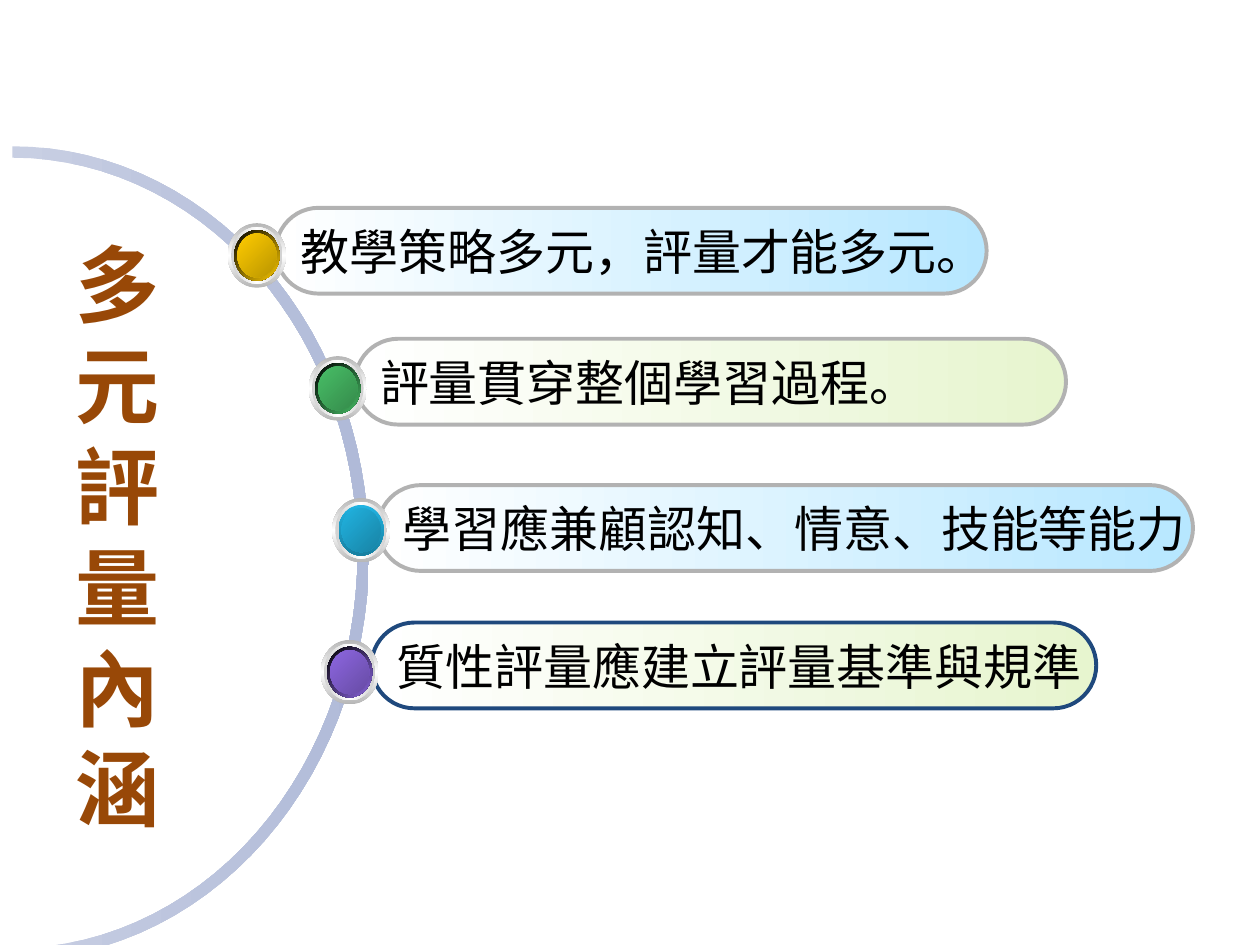
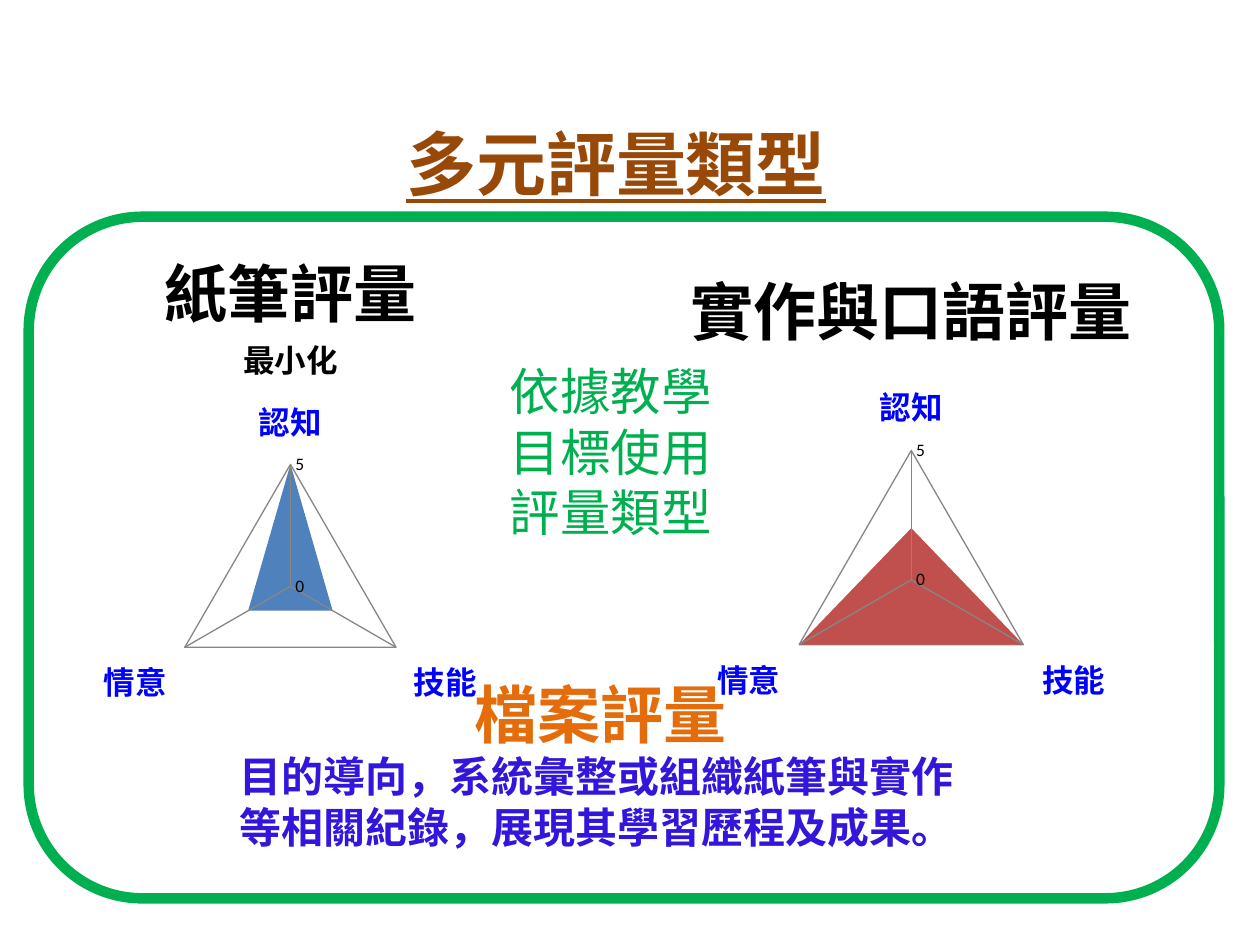
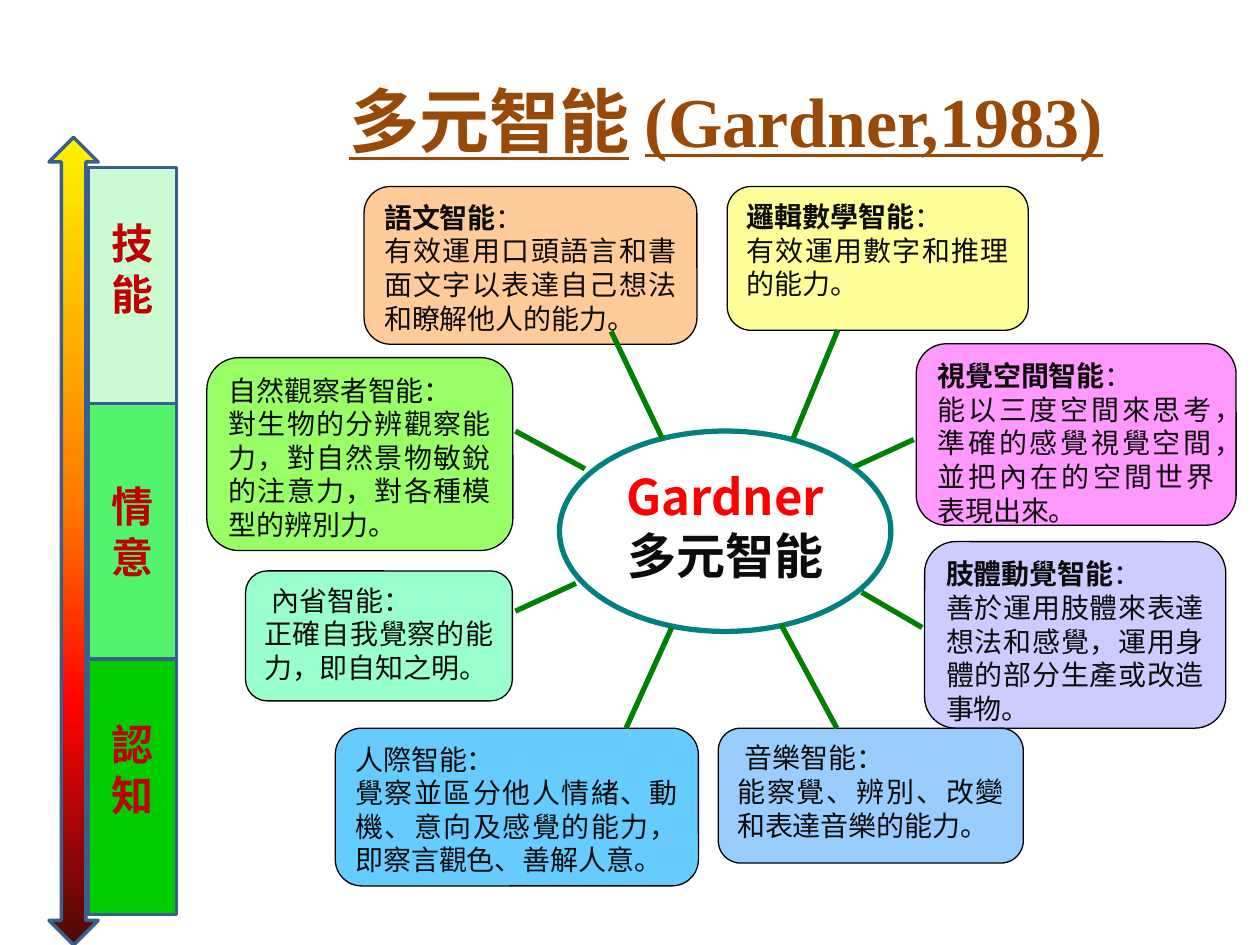
from math import cos, pi, sin

from lxml import etree
from pptx import Presentation
from pptx.chart.data import CategoryChartData
from pptx.dml.color import RGBColor
from pptx.enum.chart import XL_CHART_TYPE, XL_TICK_MARK
from pptx.enum.shapes import MSO_CONNECTOR, MSO_SHAPE
from pptx.enum.text import MSO_ANCHOR, PP_ALIGN
from pptx.oxml.ns import qn
from pptx.util import Cm, Pt

ROUND, OVAL, RECT = MSO_SHAPE.ROUNDED_RECTANGLE, MSO_SHAPE.OVAL, MSO_SHAPE.RECTANGLE
UP_DOWN = MSO_SHAPE.UP_DOWN_ARROW
STRAIGHT = MSO_CONNECTOR.STRAIGHT
RADAR = XL_CHART_TYPE.RADAR_FILLED
NO_TICK = XL_TICK_MARK.NONE
TOP, MIDDLE = MSO_ANCHOR.TOP, MSO_ANCHOR.MIDDLE
LEFT, CENTER, JUSTIFY = PP_ALIGN.LEFT, PP_ALIGN.CENTER, PP_ALIGN.JUSTIFY

SANS, SERIF, LATIN = "Noto Sans CJK SC", "Times New Roman", "Calibri"
COLORS = {
    "title": "984807", "black": "000000", "ink": "0D0C0B", "white": "FFFFFF",
    "green": "00B050", "orange": "E46C0A", "violet": "3216DC", "blue": "0000FF",
    "grid": "868686", "pill_line": "B2B2B2", "navy": "1F497D",
    "pill_blue": "B7E7FF", "pill_green": "E7F5CF",
    "arc_light": "C8CFE3", "arc_dark": "B0BAD8",
    "paper": "4F81BD", "practice": "C0504D",
    "hub_line": "008080", "spoke": "008000", "red": "FF0000",
    "domain_text": "C00000", "domain_line": "3A5F8C",
}


def rgb(color):
    return RGBColor.from_string(COLORS.get(color, color))


# ---- Shared elements ----

def style(font, size, color, name=SANS, bold=False, underline=None):
    font.size, font.bold, font.underline = Pt(size), bold, underline
    font.color.rgb = rgb(color)
    font.name = name
    etree.SubElement(font._rPr, qn("a:ea")).set("typeface", SANS)


def add_paragraph(frame, parts, size, color, name=SANS, bold=False,
                  underline=None, align=LEFT, indent=0):
    """Write one paragraph; parts is a text or a list of (text, run settings)."""
    paragraph = frame.paragraphs[0]
    if paragraph.runs:
        paragraph = frame.add_paragraph()
    paragraph.alignment = align
    if indent:
        paragraph._p.get_or_add_pPr().set("indent", str(Cm(indent)))
    style(paragraph.font, size, color, name, bold, underline)
    for text, settings in [(parts, {})] if isinstance(parts, str) else parts:
        run = paragraph.add_run()
        run.text = text
        for key, value in settings.items():
            setattr(run.font, key, value)


def add_box(slide, box, anchor=TOP):
    frame = slide.shapes.add_textbox(*map(Cm, box)).text_frame
    frame.word_wrap, frame.vertical_anchor = True, anchor
    return frame


def add_title(slide, box, parts, name=SANS):
    add_paragraph(add_box(slide, box, MIDDLE), parts, 40, "title", name,
                  bold=True, underline=True, align=CENTER)


def fill_gradient(shape, stops, angle):
    """Fill with (position, color) stops; the angle runs clockwise."""
    shape.fill.gradient()
    gradient = shape._element.spPr.find(qn("a:gradFill"))
    stop_list = gradient.find(qn("a:gsLst"))
    for old in list(stop_list):
        stop_list.remove(old)
    for position, color in stops:
        stop = etree.SubElement(stop_list, qn("a:gs"), pos=str(position * 1000))
        etree.SubElement(stop, qn("a:srgbClr"), val=COLORS.get(color, color))
    gradient.find(qn("a:lin")).set("ang", str(angle * 60000))


def finish(shape, fill=None, line=None, width=1, angle=0):
    """Fill with a color or a list of stops, and set the outline."""
    shape.shadow.inherit = False
    if isinstance(fill, list):
        fill_gradient(shape, fill, angle)
    elif fill:
        shape.fill.solid()
        shape.fill.fore_color.rgb = rgb(fill)
    else:
        shape.fill.background()
    if line:
        shape.line.color.rgb, shape.line.width = rgb(line), Pt(width)
    else:
        shape.line.fill.background()


def add_preset(slide, preset, box, fill=None, line=None, width=1, angle=0,
               anchor=TOP):
    shape = slide.shapes.add_shape(preset, *map(Cm, box))
    finish(shape, fill, line, width, angle)
    shape.text_frame.word_wrap = True
    shape.text_frame.vertical_anchor = anchor
    return shape


# ---- Slide 1: content of assessment ----

def add_arc(slide):
    center_x, center_y, steps = 0.25, 11.15, 60
    turns = [-pi / 2 + pi * i / steps for i in range(steps + 1)]
    outer = [(center_x + 7.19 * cos(t), center_y + 8.2 * sin(t)) for t in turns]
    inner = [(center_x + 6.96 * cos(t), center_y + 7.97 * sin(t)) for t in turns]
    points = [(Cm(x), Cm(y)) for x, y in outer + inner[::-1]]
    builder = slide.shapes.build_freeform(*points[0])
    builder.add_line_segments(points[1:], close=True)
    finish(builder.convert_to_shape(), [(0, "arc_light"), (100, "arc_dark")])


def add_pill(slide, left, top, width, text, tint, line):
    pill = add_preset(slide, ROUND, (left, top, width, 1.73),
                      [(0, "white"), (100, tint)], line, 2.25, anchor=MIDDLE)
    pill.adjustments[0] = 0.5
    pill.text_frame.word_wrap = False
    add_paragraph(pill.text_frame, text, 28, "black")


def add_bead(slide, x, y, rim, light, dark, rim_angle):
    rings = [
        (1.17, 1.3, [(0, "B6B6B6"), (50, "white"), (100, "B6B6B6")], 90),
        (1.04, 1.14, [(0, "D1D1D1"), (50, "white"), (100, "D1D1D1")], 0),
        (0.91, 1.02, [(0, rim[0]), (100, rim[1])], rim_angle),
        (0.79, 0.89, [(0, light), (100, dark)], 45),
    ]
    for width, height, stops, angle in rings:
        box = (x - width / 2, y - height / 2, width, height)
        add_preset(slide, OVAL, box, stops, angle=angle)


def build_content(slide):
    add_arc(slide)
    for pill in [
        (7.49, 12.55, 14.61, "質性評量應建立評量基準與規準", "pill_green", "navy"),
        (7.62, 9.78, 16.43, "學習應兼顧認知、情意、技能等能力", "pill_blue", "pill_line"),
        (7.16, 6.83, 14.33, "評量貫穿整個學習過程。", "pill_green", "pill_line"),
        (5.56, 4.19, 14.33, "教學策略多元，評量才能多元。", "pill_blue", "pill_line"),
    ]:
        add_pill(slide, *pill)
    for bead in [
        (5.18, 5.15, ("black", "FFCC00"), "FFCC00", "BA9500", 45),
        (6.81, 7.83, ("black", "48BE67"), "48BE67", "358B4B", 45),
        (7.28, 10.69, ("21B3E1", "1880A1"), "21B3E1", "1883A4", 90),
        (7.05, 13.55, ("black", "8D67E1"), "8D67E1", "674BA4", 45),
    ]:
        add_bead(slide, *bead)
    heading = add_box(slide, (1.27, 4.57, 2.34, 14.45))
    add_paragraph(heading, "多元評量內涵", 48, "title", bold=True)


# ---- Slide 2: types of assessment ----

def add_radar(slide, box, titles, scores, color):
    data = CategoryChartData()
    data.categories = ["認知", "技能", "情意"]
    data.add_series("Series 1", scores)
    chart = slide.shapes.add_chart(RADAR, *map(Cm, box), data).chart
    chart.has_legend = False
    style(chart.font, 10, "black", LATIN)

    chart.has_title = True
    for text, size in titles:
        add_paragraph(chart.chart_title.text_frame, text, size, "black", LATIN,
                      bold=True, align=CENTER)
    chart.chart_title.include_in_layout = False

    domains, score_axis = chart.category_axis, chart.value_axis
    for axis in (domains, score_axis):
        axis.major_tick_mark = axis.minor_tick_mark = NO_TICK
        axis.has_major_gridlines = True
        axis.major_gridlines.format.line.color.rgb = rgb("grid")
    domains.format.line.fill.background()
    style(domains.tick_labels.font, 18, "blue", LATIN, bold=True)
    score_axis.format.line.color.rgb = rgb("grid")
    score_axis.minimum_scale, score_axis.maximum_scale = 0, 5
    score_axis.major_unit = 5

    area = chart.plots[0].series[0].format
    area.fill.solid()
    area.fill.fore_color.rgb = rgb(color)
    area.line.fill.background()


def build_types(slide):
    add_preset(slide, ROUND, (0.58, 4.37, 24, 13.74), line="green", width=6)
    portfolio = add_box(slide, (4.57, 13.49, 15.09, 3.84))
    add_paragraph(portfolio, "檔案評量", 36, "orange", LATIN, bold=True, align=CENTER)
    add_paragraph(portfolio, "目的導向，系統彙整或組織紙筆與實作等相關紀錄，展現其學習歷程及成果。",
                  24, "violet", LATIN, bold=True)
    add_radar(slide, (0, 4.45, 11.71, 10.03), [("紙筆評量", 36), ("最小化", 18)],
              (5, 2, 2), "paper")
    add_radar(slide, (12.12, 4.57, 12.5, 9.93), [("實作與口語評量", 36)],
              (2, 5, 5), "practice")
    add_title(slide, (0.99, 1.98, 22.86, 2.59), "多元評量類型")
    add_paragraph(add_box(slide, (9.53, 7.14, 5.56, 3.76)), "依據教學目標使用評量類型",
                  28.8, "green", align=CENTER)


# ---- Slide 3: multiple intelligences ----

# box, fill, name, bold name, indent of name, description, spoke
INTELLIGENCES = [
    ((7.34, 3.76, 6.71, 3.18), "FFCC99", "語文智能", True, 0,
     "有效運用口頭語言和書面文字以表達自己想法和瞭解他人的能力。",
     (12.32, 6.68, 13.36, 8.86)),
    ((18.64, 10.92, 6.07, 3.76), "CCCCFF", "肢體動覺智能", True, 0,
     "善於運用肢體來表達想法和感覺，運用身體的部分生產或改造事物。",
     (17.37, 11.94, 18.59, 12.65)),
    ((18.47, 6.93, 6.45, 3.66), "FF99FF", "視覺空間智能", True, 0,
     "能以三度空間來思考，準確的感覺視覺空間，並把內在的空間世界表現出來。",
     (17.2, 9.42, 18.42, 8.86)),
    ((14.66, 3.76, 6.07, 2.9), "FFFF99", "邏輯數學智能", True, 0,
     "有效運用數字和推理的能力。",
     (16.89, 6.65, 15.98, 8.86)),
    ((4.17, 7.21, 6.17, 3.89), "99FF66", "自然觀察者智能", False, 0,
     "對生物的分辨觀察能力，對自然景物敏銳的注意力，對各種模型的辨別力。",
     (10.39, 8.69, 11.79, 9.45)),
    ((4.95, 11.51, 5.38, 2.62), "99FFCC", "內省智能", False, 0.15,
     "正確自我覺察的能力，即自知之明。",
     (11.61, 11.76, 10.39, 12.32)),
    ((6.76, 14.68, 7.32, 3.18), "66CCFF", "人際智能", False, 0,
     "覺察並區分他人情緒、動機、意向及感覺的能力，即察言觀色、善解人意。",
     (13.54, 12.65, 12.62, 14.68)),
    ((14.48, 14.68, 6.15, 2.72), "99CCFF", "音樂智能", False, 0.15,
     "能察覺、辨別、改變和表達音樂的能力。",
     (15.75, 12.6, 16.87, 14.68)),
]


def add_card(slide, box, fill, name, bold, indent, description):
    frame = add_preset(slide, ROUND, box, fill, "black", 0.75).text_frame
    heading = [(name, {"bold": True}), ("：", {})] if bold else name + "："
    add_paragraph(frame, heading, 16, "ink", SERIF, align=JUSTIFY, indent=indent)
    add_paragraph(frame, description, 16, "ink", SERIF, align=JUSTIFY)


def add_spoke(slide, ends):
    spoke = slide.shapes.add_connector(STRAIGHT, *map(Cm, ends))
    spoke.line.color.rgb, spoke.line.width = rgb("spoke"), Pt(3)
    etree.SubElement(spoke._element.spPr, qn("a:effectLst"))


def add_domain(slide, top, height, text, fill, lift):
    domain = add_preset(slide, RECT, (1.78, top, 1.78, height), fill,
                        "domain_line", 2, anchor=MIDDLE)
    domain.text_frame.margin_bottom = Cm(0.13 + lift)
    add_paragraph(domain.text_frame, text, 24, "domain_text", LATIN, bold=True,
                  align=CENTER)


def build_intelligences(slide):
    hub = add_preset(slide, OVAL, (11.28, 8.69, 6.68, 4.04), "white", "hub_line", 3)
    add_paragraph(hub.text_frame, "Gardner", 28, "red", bold=True, align=CENTER)
    add_paragraph(hub.text_frame, "多元智能", 28, "ink", SERIF, bold=True, align=CENTER)
    for *card, _ in INTELLIGENCES:
        add_card(slide, *card)
    for *_, spoke in INTELLIGENCES:
        add_spoke(slide, spoke)
    for domain in [
        (13.28, 5.16, "認知", "00CC00", 0.7),
        (8.13, 5.16, "情意", "53F36E", 0),
        (3.38, 4.76, "技能", "CCFCD4", 0.7),
    ]:
        add_domain(slide, *domain)
    add_preset(slide, UP_DOWN, (0.99, 2.77, 0.99, 16.28),
               [(0, "FFF200"), (45, "FF7A00"), (70, "FF0300"), (100, "4D0808")],
               "domain_line", 2, angle=90)
    add_title(slide, (4.5, 1.12, 20.27, 2.59),
              [("多元智能", {}), (" ", {"underline": False}), ("(Gardner,1983)", {})],
              SERIF)


def main():
    deck = Presentation()
    deck.slide_width, deck.slide_height = Cm(25.4), Cm(19.05)
    for build in (build_content, build_types, build_intelligences):
        build(deck.slides.add_slide(deck.slide_layouts[6]))
    deck.save("out.pptx")


if __name__ == "__main__":
    main()
